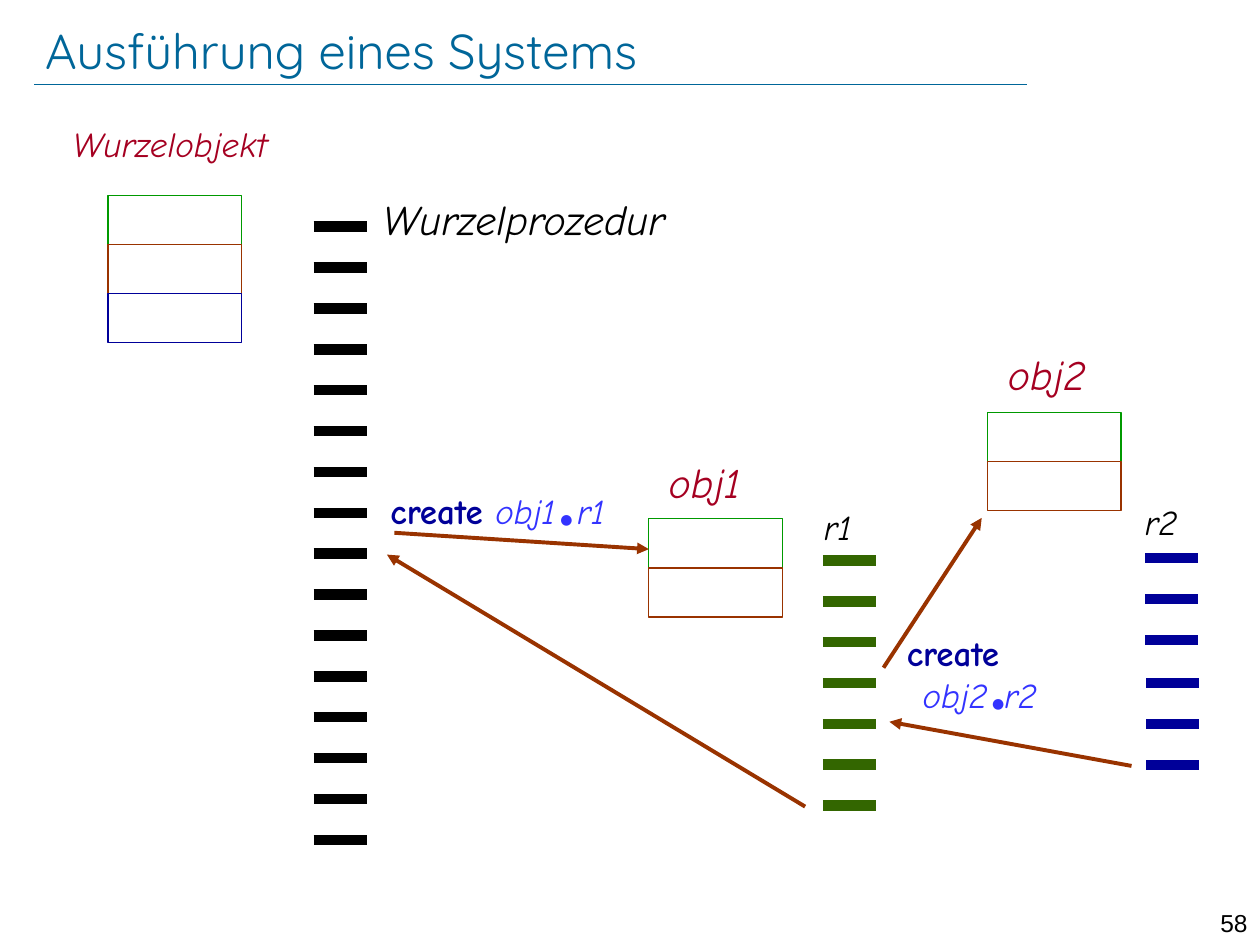
"""Build the slide on running an object-oriented system: objects, routines and create calls."""
from lxml.etree import SubElement
from pptx import Presentation
from pptx.dml.color import RGBColor
from pptx.enum.shapes import MSO_CONNECTOR as Connector, MSO_SHAPE as Shape
from pptx.enum.text import MSO_ANCHOR as Anchor, PP_ALIGN as Align
from pptx.oxml.ns import qn
from pptx.util import Cm, Pt

COLORS = {
    "title": "006699", "black": "000000", "object": "A50021", "green": "009900",
    "brown": "993300", "navy": "000099", "olive": "336600", "call": "3333FF",
}
BODY_FONT = "Comic Neue"
CELL_WIDTH, CELL_HEIGHT = 2.69, 0.99
DASH_LENGTH = 1.07
TEXT_START, SECOND_LINE_START = 1.27, 1.59

OBJECT_STACKS = [
    (2.18, 3.94, ["green", "brown", "navy"]),
    (13.08, 10.46, ["green", "brown"]),
    (19.91, 8.31, ["green", "brown"]),
]
# left, first y, last y, count, colour
ROUTINES = [
    (6.32, 4.57, 16.93, 16, "black"),
    (16.59, 11.3, 16.24, 7, "olive"),
    (23.09, 11.25, 12.9, 3, "navy"),
    (23.11, 13.77, 15.42, 3, "navy"),
]
ARROWS = [
    (7.95, 10.74, 13.08, 11.07),
    (17.81, 13.46, 19.79, 10.44),
    (16.23, 16.26, 7.8, 11.18),
    (22.81, 15.44, 17.93, 14.55),
]
LABELS = [
    ("Wurzelobjekt", (-0.05, 2.34, 6.63, 1.12), 20, "object"),
    ("Wurzelprozedur", (6.2, 3.78, 8.74, 1.27), 24, "black"),
    ("obj1", (11.96, 9.07, 6.2, 1.27), 24, "object"),
    ("obj2", (18.8, 6.91, 6.2, 1.27), 24, "object"),
    ("r1", (15.09, 10.06, 5.66, 1.09), 20, "black"),
    ("r2", (21.56, 9.96, 3.68, 1.09), 20, "black"),
]
RUN_STYLES = {
    "keyword": {"size": 20, "color": "navy", "bold": True},
    "name": {"size": 20, "color": "call", "italic": True},
    "dot": {"size": 8, "color": "call"},
}
CREATE_CALLS = [
    ((6.35, 9.75, 9.02, 1.12), [
        (TEXT_START, [("create ", "keyword"), ("obj1", "name"), (" ● ", "dot"), ("r1", "name")]),
    ]),
    ((16.76, 12.6, 5.11, 1.96), [
        (TEXT_START, [("create", "keyword")]),
        (SECOND_LINE_START, [("obj2", "name"), (" ●", "dot"), ("r2", "name")]),
    ]),
]


def rgb(name):
    return RGBColor.from_string(COLORS[name])


def add_line(slide, start_x, start_y, end_x, end_y, color, width, arrow=False):
    line = slide.shapes.add_connector(
        Connector.STRAIGHT, Cm(start_x), Cm(start_y), Cm(end_x), Cm(end_y))
    line.line.color.rgb = rgb(color)
    line.line.width = Pt(width)
    if arrow:
        SubElement(line.line._get_or_add_ln(), qn("a:tailEnd"), type="triangle")
    SubElement(line._element.spPr, qn("a:effectLst"))


def add_stack(slide, left, top, colors):
    for row, color in enumerate(colors):
        cell = slide.shapes.add_shape(
            Shape.RECTANGLE, Cm(left), Cm(top + row * CELL_HEIGHT), Cm(CELL_WIDTH), Cm(CELL_HEIGHT))
        cell.shadow.inherit = False
        cell.fill.background()
        cell.line.color.rgb = rgb(color)
        cell.line.width = Pt(0.75)


def add_routine(slide, left, first, last, count, color):
    step = (last - first) / (count - 1)
    for index in range(count):
        y = first + index * step
        add_line(slide, left, y, left + DASH_LENGTH, y, color, 6)


def add_text_frame(slide, box):
    frame = slide.shapes.add_textbox(*map(Cm, box)).text_frame
    frame.word_wrap = True
    return frame


def style_run(run, size, color, font=BODY_FONT, bold=False, italic=False):
    run.font.name = font
    run.font.size = Pt(size)
    run.font.bold = bold
    run.font.italic = italic
    run.font.color.rgb = rgb(color)


def set_start(paragraph, start):
    properties = paragraph._p.get_or_add_pPr()
    properties.set("marL", str(Cm(start)))
    properties.set("indent", "0")


def add_label(slide, text, box, size, color, font=BODY_FONT, start=0, italic=False):
    frame = add_text_frame(slide, box)
    frame.text = text
    paragraph = frame.paragraphs[0]
    set_start(paragraph, start)
    style_run(paragraph.runs[0], size, color, font, italic=italic)
    return frame


def add_create_call(slide, box, lines):
    frame = add_text_frame(slide, box)
    for index, (start, parts) in enumerate(lines):
        paragraph = frame.add_paragraph() if index else frame.paragraphs[0]
        set_start(paragraph, start)
        for text, style in parts:
            run = paragraph.add_run()
            run.text = text
            style_run(run, **RUN_STYLES[style])


def main():
    presentation = Presentation()
    presentation.slide_width, presentation.slide_height = Cm(25.4), Cm(19.05)
    slide = presentation.slides.add_slide(presentation.slide_layouts[6])

    add_line(slide, 0.69, 1.7, 20.7, 1.7, "title", 0.25)
    title = add_label(
        slide, "Ausführung eines Systems", (0.91, 0.38, 17.63, 1.24), 28, "title", "Quicksand")
    title.margin_left = title.margin_right = title.margin_top = title.margin_bottom = 0
    title.vertical_anchor = Anchor.MIDDLE
    number = add_label(slide, "58", (24, 18.19, 1.4, 0.61), 14, "black", "Arial")
    number.paragraphs[0].alignment = Align.RIGHT

    for stack in OBJECT_STACKS:
        add_stack(slide, *stack)
    for routine in ROUTINES:
        add_routine(slide, *routine)
    for arrow in ARROWS:
        add_line(slide, *arrow, "brown", 2.25, arrow=True)
    for label in LABELS:
        add_label(slide, *label, start=TEXT_START, italic=True)
    for call in CREATE_CALLS:
        add_create_call(slide, *call)

    presentation.save("out.pptx")


if __name__ == "__main__":
    main()
